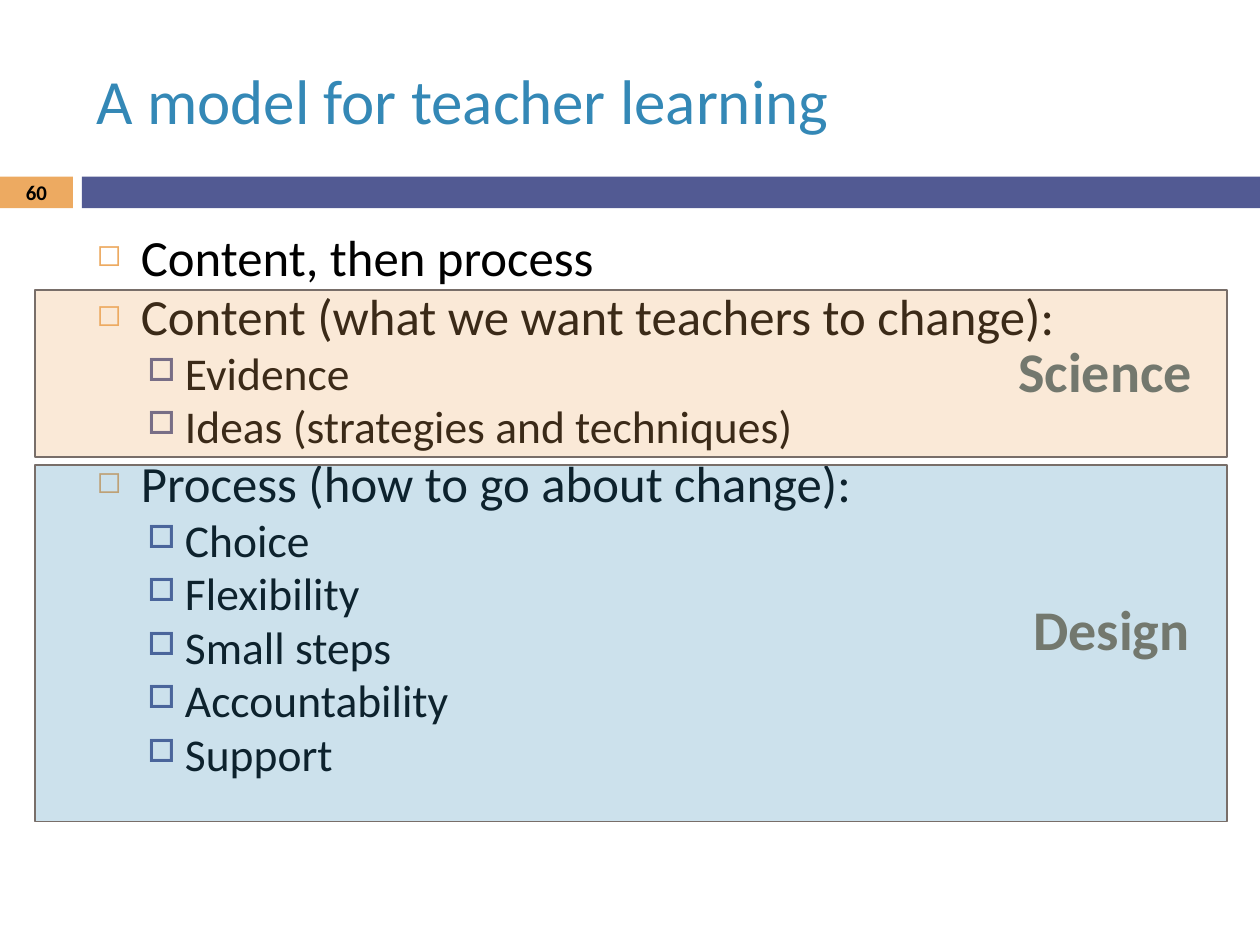
from lxml import etree
from pptx import Presentation, util as u
from pptx.dml.color import RGBColor
from pptx.enum import shapes, text
from pptx.oxml import ns

ORANGE, INDIGO, BLUE = "EDAA61", "525A93", "3488B6"
BLACK, GREY, OUTLINE = "000000", "73786E", "786E69"


def rgb(value):
    return RGBColor.from_string(value)


class Deck:
    """Holds the style and the current slide, with a method for each element."""

    font = "Calibri"
    levels = (
        dict(size=29, left=0.89, hang=0.89, mark="◻", color=ORANGE, scale=60),
        dict(size=26, left=1.78, hang=0.76, mark="□", color=INDIGO, scale=70),
    )

    def __init__(self):
        self.file = Presentation()
        self.file.slide_width, self.file.slide_height = u.Cm(25.4), u.Cm(19.05)
        self.slide = self.file.slides.add_slide(self.file.slide_layouts[6])

    def bar(self, place, color, opacity=None, outline=None):
        bar = self.slide.shapes.add_shape(shapes.MSO_SHAPE.RECTANGLE, *map(u.Cm, place))
        bar.shadow.inherit = False
        bar.fill.solid()
        bar.fill.fore_color.rgb = rgb(color)
        if opacity:
            tint = bar._element.spPr.find(".//" + ns.qn("a:srgbClr"))
            etree.SubElement(tint, ns.qn("a:alpha"), val=str(opacity * 1000))
        if outline:
            bar.line.color.rgb = rgb(outline)
            bar.line.width = u.Pt(1)
        else:
            bar.line.fill.background()

    def frame(self, place, anchor=text.MSO_ANCHOR.TOP):
        frame = self.slide.shapes.add_textbox(*map(u.Cm, place)).text_frame
        frame.word_wrap = True
        frame.vertical_anchor = anchor
        return frame

    def style(self, paragraph, size, color, bold=False):
        font = paragraph.font
        font.name, font.size, font.bold = self.font, u.Pt(size), bold
        font.color.rgb = rgb(color)

    def label(self, words, place, size, color, bold=False,
              align=text.PP_ALIGN.LEFT, anchor=text.MSO_ANCHOR.MIDDLE):
        paragraph = self.frame(place, anchor).paragraphs[0]
        paragraph.text, paragraph.alignment = words, align
        self.style(paragraph, size, color, bold)

    def outline(self, items, place):
        frame = self.frame(place)
        for index, (depth, words) in enumerate(items):
            paragraph = frame.add_paragraph() if index else frame.paragraphs[0]
            paragraph.text, paragraph.level = words, depth
            paragraph.line_spacing = 0.98
            level = self.levels[depth]
            self.bullet(paragraph, level)
            self.style(paragraph, level["size"], BLACK)

    def bullet(self, paragraph, level):
        props = paragraph._p.get_or_add_pPr()
        props.set("marL", str(u.Cm(level["left"])))
        props.set("indent", str(-u.Cm(level["hang"])))
        tint = etree.SubElement(props, ns.qn("a:buClr"))
        etree.SubElement(tint, ns.qn("a:srgbClr"), val=level["color"])
        etree.SubElement(props, ns.qn("a:buSzPct"), val=str(level["scale"] * 1000))
        etree.SubElement(props, ns.qn("a:buChar"), char=level["mark"])


def main():
    deck = Deck()
    deck.bar((0, 3.56, 1.47, 0.64), ORANGE)
    deck.bar((1.65, 3.56, 23.75, 0.64), INDIGO)
    deck.label("A model for teacher learning", (1.7, 0.64, 22.66, 2.74), 36, BLUE)
    deck.outline([
        (0, "Content, then process"),
        (0, "Content (what we want teachers to change):"),
        (1, "Evidence"),
        (1, "Ideas (strategies and techniques)"),
        (0, "Process (how to go about change):"),
        (1, "Choice"),
        (1, "Flexibility"),
        (1, "Small steps"),
        (1, "Accountability"),
        (1, "Support"),
    ], (1.7, 4.48, 22.66, 12.5))
    deck.label("60", (0, 3.53, 1.47, 0.69), 11.9, BLACK, True, text.PP_ALIGN.CENTER)

    zones = (
        ("Science", ORANGE, 5.84, 3.38, (19.53, 6.65, 4.75, 0.66)),
        ("Design", BLUE, 9.37, 7.19, (19.81, 11.86, 4.42, 2.51)),
    )
    for name, color, top, height, place in zones:
        deck.bar((0.71, top, 24.03, height), color, 25, OUTLINE)
        deck.label(name, place, 32, GREY, True, text.PP_ALIGN.RIGHT, text.MSO_ANCHOR.TOP)
    deck.file.save("out.pptx")


if __name__ == "__main__":
    main()
